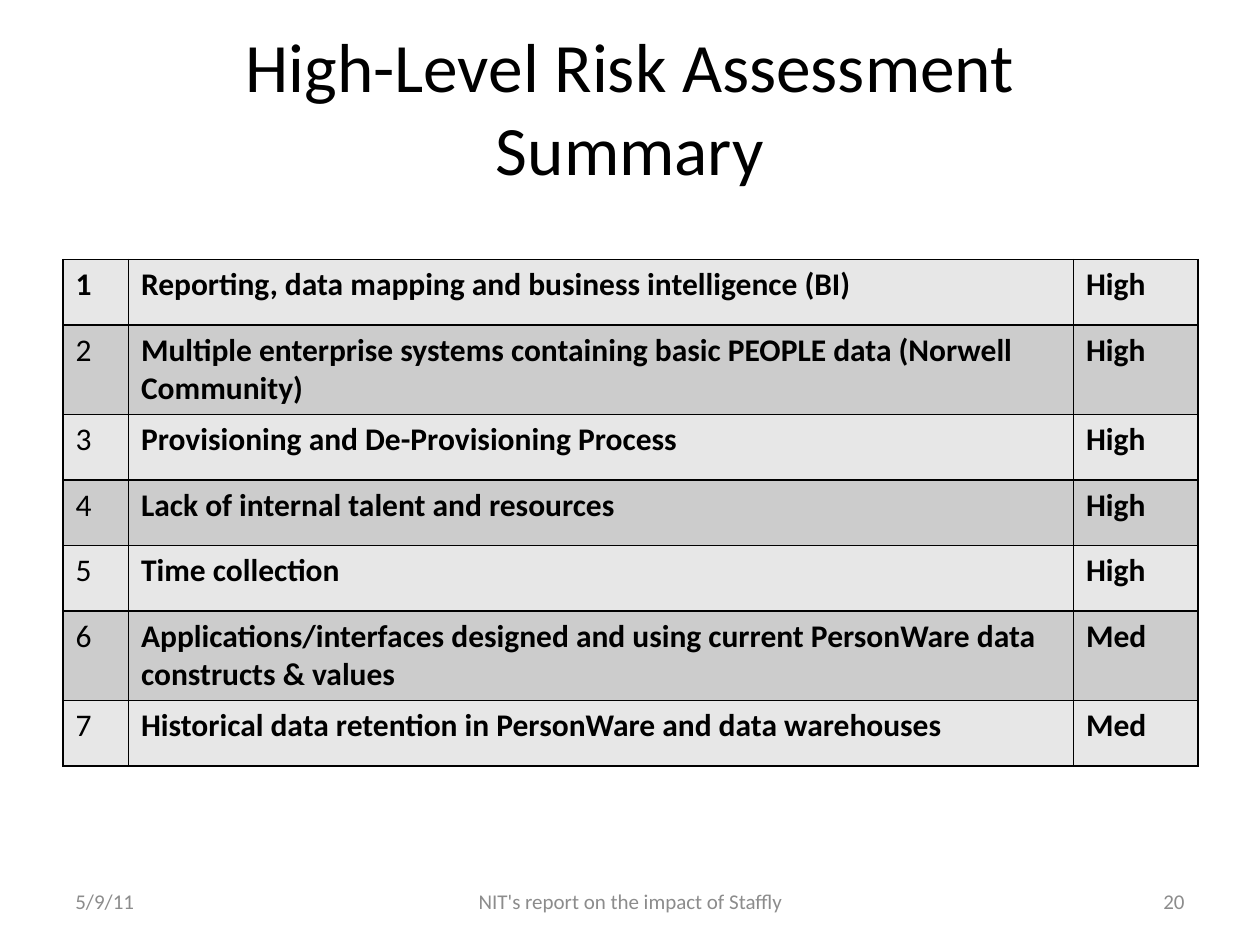
from dataclasses import dataclass

from lxml.etree import SubElement
from pptx import Presentation
from pptx.dml.color import RGBColor
from pptx.enum.text import MSO_ANCHOR, MSO_AUTO_SIZE, PP_ALIGN
from pptx.oxml.ns import qn
from pptx.slide import Slide
from pptx.table import _Cell
from pptx.util import Inches, Pt

FONT = "Calibri"
BLACK = "000000"
GREY = "8C8C8C"
BANDS = ("E7E7E7", "CCCCCC")
COLUMN_WIDTHS = (0.52, 7.5, 0.99)
ROW_HEIGHT = 0.52


@dataclass
class Risk:
    name: str
    level: str


@dataclass
class FooterItem:
    text: str
    left: float
    width: float
    align: PP_ALIGN


RISKS = [
    Risk("Reporting, data mapping and business intelligence (BI)", "High"),
    Risk("Multiple enterprise systems containing basic PEOPLE data (Norwell Community)", "High"),
    Risk("Provisioning and De-Provisioning Process", "High"),
    Risk("Lack of internal talent and resources", "High"),
    Risk("Time collection", "High"),
    Risk("Applications/interfaces designed and using current PersonWare data constructs & values", "Med"),
    Risk("Historical data retention in PersonWare and data warehouses", "Med"),
]
FOOTER = [
    FooterItem("5/9/11", 0.5, 2.33, PP_ALIGN.LEFT),
    FooterItem("NIT's report on the impact of Staffly", 3.42, 3.17, PP_ALIGN.CENTER),
    FooterItem("20", 7.17, 2.33, PP_ALIGN.RIGHT),
]


def rgb(color: str) -> RGBColor:
    return RGBColor.from_string(color)


def style(para, size: float, color: str, bold: bool = False) -> None:
    para.font.name = FONT
    para.font.size = Pt(size)
    para.font.bold = bold
    para.font.color.rgb = rgb(color)


def add_borders(cell: _Cell) -> None:
    """Draw a thin black line on all four sides; lines must precede the fill."""
    properties = cell._tc.get_or_add_tcPr()
    for position, side in enumerate(("a:lnL", "a:lnR", "a:lnT", "a:lnB")):
        line = SubElement(properties, qn(side), w=str(Pt(1)))
        fill = SubElement(line, qn("a:solidFill"))
        SubElement(fill, qn("a:srgbClr"), val=BLACK)
        properties.insert(position, line)


def fill_cell(cell: _Cell, text: str, band: str, bold: bool) -> None:
    cell.text = text
    style(cell.text_frame.paragraphs[0], 18, BLACK, bold)
    cell.fill.solid()
    cell.fill.fore_color.rgb = rgb(band)
    add_borders(cell)


def add_title(page: Slide, text: str) -> None:
    title = page.shapes.title
    title.left, title.top = Inches(0.5), Inches(0.22)
    title.width, title.height = Inches(9), Inches(1.25)
    frame = title.text_frame
    frame.text = text
    frame.auto_size = MSO_AUTO_SIZE.NONE
    frame.vertical_anchor = MSO_ANCHOR.MIDDLE
    para = frame.paragraphs[0]
    para.alignment = PP_ALIGN.CENTER
    style(para, 39.6, BLACK)


def add_risk_table(page: Slide, risks: list[Risk]) -> None:
    table = page.shapes.add_table(
        len(risks), len(COLUMN_WIDTHS), Inches(0.5), Inches(2.06),
        Inches(sum(COLUMN_WIDTHS)), Inches(ROW_HEIGHT * len(risks)),
    ).table
    for column, width in zip(table.columns, COLUMN_WIDTHS):
        column.width = Inches(width)
    for index, risk in enumerate(risks):
        table.rows[index].height = Inches(ROW_HEIGHT)
        band = BANDS[index % len(BANDS)]
        for column, text in enumerate((str(index + 1), risk.name, risk.level)):
            bold = index == 0 or column > 0
            fill_cell(table.cell(index, column), text, band, bold)


def add_footer_item(page: Slide, item: FooterItem) -> None:
    box = page.shapes.add_textbox(
        Inches(item.left), Inches(6.95), Inches(item.width), Inches(0.4))
    frame = box.text_frame
    frame.word_wrap = True
    frame.vertical_anchor = MSO_ANCHOR.MIDDLE
    para = frame.paragraphs[0]
    para.text = item.text
    para.alignment = item.align
    style(para, 12, GREY)


def main() -> None:
    deck = Presentation()
    deck.slide_width, deck.slide_height = Inches(10), Inches(7.5)
    page = deck.slides.add_slide(deck.slide_layouts.get_by_name("Title Only"))
    add_title(page, "High-Level Risk Assessment\vSummary")
    add_risk_table(page, RISKS)
    for item in FOOTER:
        add_footer_item(page, item)
    deck.save("out.pptx")


if __name__ == "__main__":
    main()
